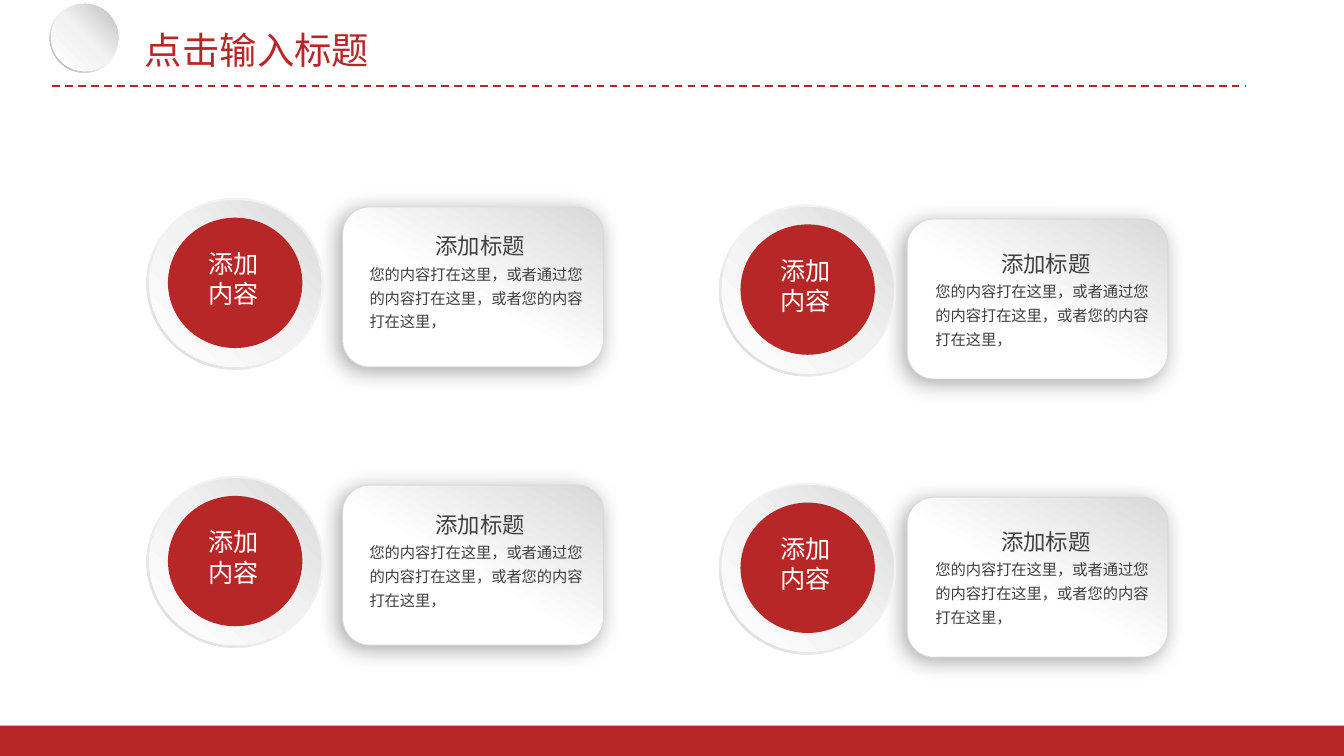
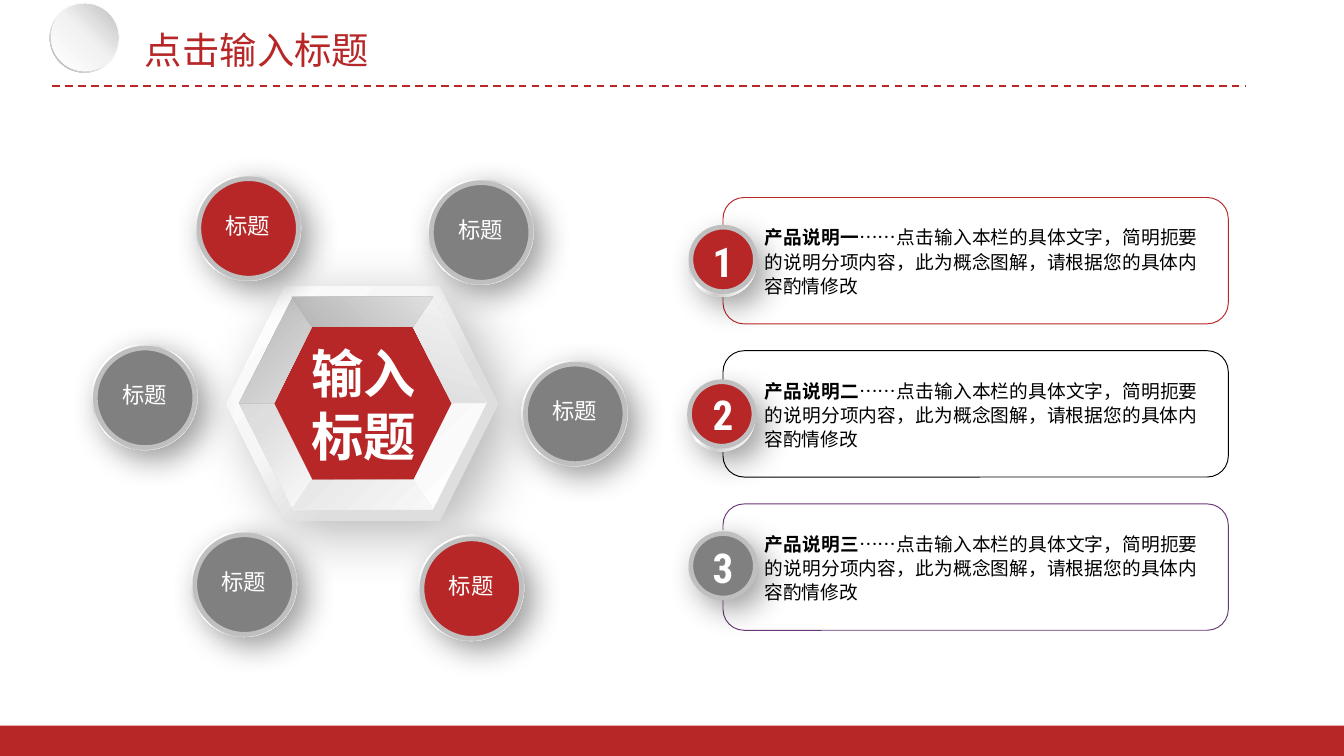
from lxml import etree
from pptx import Presentation, util as u
from pptx.dml.color import RGBColor
from pptx.enum import dml, shapes, text
from pptx.oxml import ns

RED = RGBColor(0xB7, 0x27, 0x27)
GREY = RGBColor(0x80, 0x80, 0x80)
DARK = RGBColor(0x40, 0x40, 0x40)
PURPLE = RGBColor(0x6A, 0x37, 0x79)
BLACK = RGBColor(0, 0, 0)
WHITE = RGBColor(0xFF, 0xFF, 0xFF)

CJK = "Noto Sans CJK SC"
ROBOTO = "Roboto Condensed"
KIND = shapes.MSO_SHAPE
CENTER, JUSTIFY = text.PP_ALIGN.CENTER, text.PP_ALIGN.JUSTIFY
MIDDLE = text.MSO_ANCHOR.MIDDLE
NO_INSET = (0, 0, 0, 0)

# Gradients: stops (percent, colour) and clockwise angle
TITLE_RIM = ([(0, "FFFFFF"), (55, "F2F2F2"), (100, "A6A6A6")], 135)
TITLE_DISC = ([(0, "FFFFFF"), (51, "F2F2F2"), (100, "BFBFBF")], 315)
BADGE_RIM = ([(0, "F2F2F2"), (55, "F2F2F2"), (100, "D9D9D9")], 135)
BADGE_DISC = ([(0, "FFFFFF"), (51, "F2F2F2"), (100, "D9D9D9")], 315)
CARD = ([(45, "FFFFFF"), (100, "D9D9D9")], 300)
CARD_EDGE = ([(0, "FFFFFF"), (50, "D9D9D9"), (100, "FFFFFF")], 45)
METAL = ([(16, "FFFFFF"), (33, "D9D9D9"), (49, "FFFFFF"), (69, "CCCCCC"), (91, "FFFFFF")], 45)
METAL_EDGE = ([(0, "FFFFFF"), (50, "BFBFBF"), (100, "FFFFFF")], 45)
HEX_BASE = ([(17, "DEDEDE"), (37, "E0E0E0"), (61, "F6F6F6"), (100, "FFFFFF")], 225)
HEX_RING = ([(0, "CBCBCB"), (32, "DEDEDE"), (57, "F5F5F5"), (100, "FFFFFF")], 45)
FACET_LIGHT = ([(0, "E6E6E6"), (100, "F7F7F7")], 45)
FACET_MID = ([(0, "DEDEDE"), (100, "F4F4F4")], 288)
FACET_DARK = ([(0, "B4B4B4"), (100, "DFDFDF")], 45)

# Shadows: colour, opacity percent, blur, distance, direction
CARD_SHADOW = ("000000", 34, 12, 3, 135)
BUTTON_SHADOW = ("000000", 40, 17, 7, 45)
HEX_SHADOW = ("696969", 47, 30, 10, 40)

TITLE = dict(size=u.Pt(20), name=ROBOTO, color=RED)
BADGE_TEXT = dict(size=u.Pt(13.5), name=CJK, color=WHITE)
CARD_HEAD = dict(size=u.Pt(12), name=CJK, color=DARK)
CARD_BODY = dict(size=u.Pt(8.2), name=CJK, color=DARK)
HEX_TEXT = dict(size=u.Pt(28), name=ROBOTO, color=WHITE, bold=True)
NUMBER = dict(size=u.Pt(22), name=ROBOTO, color=WHITE, bold=True)
BUTTON_TEXT = dict(size=u.Pt(12), name=ROBOTO, color=WHITE)
STEP = dict(size=u.Pt(10), name=ROBOTO, color=BLACK, bold=False)
STEP_HEAD = {**STEP, "bold": True}


def sub(parent, tag, **attrs):
    return etree.SubElement(parent, ns.qn(tag), {k: str(v) for k, v in attrs.items()})


def apply_gradient(fill, xml_parent, gradient):
    """Give a fill or line the listed stops and clockwise angle."""
    stops, angle = gradient
    fill.gradient()
    grad = xml_parent.find(ns.qn("a:gradFill"))
    for child in list(grad):
        grad.remove(child)
    gs_list = sub(grad, "a:gsLst")
    for pos, color in stops:
        sub(sub(gs_list, "a:gs", pos=pos * 1000), "a:srgbClr", val=color)
    sub(grad, "a:lin", ang=angle * 60000, scaled=0)


def paint(fill, xml_parent, value):
    """Apply None, a solid colour or a gradient."""
    if value is None:
        fill.background()
    elif isinstance(value, RGBColor):
        fill.solid()
        fill.fore_color.rgb = value
    else:
        apply_gradient(fill, xml_parent, value)


def add_shadow(sp, shadow):
    color, opacity, blur, dist, angle = shadow
    effects = sp._element.spPr.find(ns.qn("a:effectLst"))
    outer = sub(effects, "a:outerShdw", blurRad=u.Pt(blur), dist=u.Pt(dist),
                dir=angle * 60000, algn="ctr", rotWithShape=0)
    sub(sub(outer, "a:srgbClr", val=color), "a:alpha", val=opacity * 1000)


def style(sp, fill=None, line=None, width=0.5, shadow=None):
    sp.shadow.inherit = False
    paint(sp.fill, sp._element.spPr, fill)
    if line is None:
        sp.line.fill.background()
    else:
        sp.line.width = u.Pt(width)
        paint(sp.line.fill, sp.line._get_or_add_ln(), line)
    if shadow:
        add_shadow(sp, shadow)
    return sp


def shape(s, kind, x, y, w, h, adj=None, **look):
    sp = s.shapes.add_shape(kind, *map(u.Inches, (x, y, w, h)))
    if adj is not None:
        sp.adjustments[0] = adj
    return style(sp, **look)


def polygon(s, contours, fill):
    """Draw closed contours, given in inches, as one outline."""
    emu = [[(u.Inches(x), u.Inches(y)) for x, y in points] for points in contours]
    builder = s.shapes.build_freeform(*emu[0][0])
    for i, (start, *rest) in enumerate(emu):
        if i:
            builder.move_to(*start)
        builder.add_line_segments(rest, close=True)
    return style(builder.convert_to_shape(), fill)


def write(sp, paragraphs, inset=(0.1, 0.05, 0.1, 0.05), anchor=text.MSO_ANCHOR.TOP,
          align=None, spacing=None):
    """Fill a shape with paragraphs, each a list of (text, font) runs."""
    tf = sp.text_frame
    tf.word_wrap, tf.vertical_anchor = True, anchor
    for side, margin in zip(("left", "top", "right", "bottom"), inset):
        setattr(tf, f"margin_{side}", u.Inches(margin))
    for i, runs in enumerate(paragraphs):
        p = tf.add_paragraph() if i else tf.paragraphs[0]
        p.alignment, p.line_spacing = align, spacing
        for words, font in runs:
            r = p.add_run()
            r.text = words
            for attr, value in font.items():
                if attr == "color":
                    r.font.color.rgb = value
                else:
                    setattr(r.font, attr, value)
            sub(r.font._element, "a:ea", typeface=CJK)


def label(s, x, y, w, h, paragraphs, **layout):
    box = s.shapes.add_textbox(*map(u.Inches, (x, y, w, h)))
    write(box, paragraphs, **layout)
    return box


def disc(s, x, y, w, h, inset, rim, face):
    """A shaded disc with a thin rim around it."""
    shape(s, KIND.DONUT, x, y, w, h, 0.049, fill=rim)
    shape(s, KIND.OVAL, x + inset, y + inset, w - 2 * inset, h - 2 * inset, fill=face)


def new_slide(prs, title):
    s = prs.slides.add_slide(prs.slide_layouts[6])
    rule = s.shapes.add_connector(shapes.MSO_CONNECTOR.STRAIGHT,
                                  *map(u.Inches, (0.39, 0.64, 9.27, 0.64)))
    rule.line.color.rgb, rule.line.width = RED, u.Pt(1)
    rule.line.dash_style = dml.MSO_LINE.DASH
    sub(rule._element.spPr, "a:effectLst")
    disc(s, 0.37, 0.02, 0.52, 0.52, 0.01, TITLE_RIM, TITLE_DISC)
    shape(s, KIND.RECTANGLE, 0, 5.4, 10, 0.24, fill=RED)
    label(s, 0.98, 0.14, 2.75, 0.45, [[(title, TITLE)]], anchor=MIDDLE)
    return s


def card(s, x, y, text_x, text_y):
    shape(s, KIND.ROUNDED_RECTANGLE, x, y, 1.94, 1.19, fill=CARD, line=CARD_EDGE,
          shadow=CARD_SHADOW)
    body = "您的内容打在这里，或者通过您的内容打在这里，或者您的内容打在这里，"
    label(s, text_x, text_y, 1.83, 0.62, [[(body, CARD_BODY)]],
          inset=(0.07, 0.04, 0.07, 0.04), spacing=1.3)
    label(s, text_x + 0.49, text_y - 0.26, 1.1, 0.3, [[("添加标题", CARD_HEAD)]],
          inset=(0.07, 0, 0.07, 0), spacing=1.5)


def badge(s, x, y):
    disc(s, x, y, 1.32, 1.28, 0.02, BADGE_RIM, BADGE_DISC)
    shape(s, KIND.OVAL, x + 0.16, y + 0.15, 1, 0.97, fill=RED)
    label(s, x + 0.36, y + 0.33, 0.75, 0.56,
          [[(word, BADGE_TEXT)] for word in ("添加", "内容")])


def button(s, x, y, size, face, dx, dy, color):
    """A metal disc with a coloured face offset by dx, dy."""
    shape(s, KIND.OVAL, x, y, size, size, fill=METAL, shadow=BUTTON_SHADOW)
    shape(s, KIND.OVAL, x + dx, y + dy, face, face, fill=color, line=METAL_EDGE, width=2.5)


def orbit_button(s, x, y, color):
    button(s, x, y, 0.79, 0.74, 0.03, 0.03, color)
    sp = shape(s, KIND.OVAL, x + 0.02, y, 0.75, 0.75)
    write(sp, [[("标题", BUTTON_TEXT)]], inset=NO_INSET, anchor=MIDDLE, align=CENTER)


def hexagon_hub(s):
    inner = [(2.32, 2.43), (2.04, 3), (2.32, 3.57), (3.07, 3.57), (3.36, 3), (3.07, 2.43)]
    outer = [(2.18, 2.21), (3.22, 2.21), (3.62, 3), (3.22, 3.79), (2.18, 3.79), (1.78, 3)]
    shape(s, KIND.HEXAGON, 1.68, 2.13, 2.03, 1.75, fill=HEX_BASE, shadow=HEX_SHADOW)
    polygon(s, [inner, outer], HEX_RING)
    shape(s, KIND.HEXAGON, 2.04, 2.43, 1.32, 1.14, fill=RED)
    shape(s, KIND.TRAPEZOID, 2.17, 3.57, 1.05, 0.22, 0.663, fill=FACET_LIGHT)
    polygon(s, [[outer[1], inner[5], inner[4], outer[2]]], FACET_MID)
    polygon(s, [[outer[0], inner[0], inner[1], outer[5]]], FACET_DARK)
    top = shape(s, KIND.TRAPEZOID, 2.17, 2.21, 1.05, 0.22, 0.663, fill=FACET_DARK)
    top._element.spPr.xfrm.set("flipV", "1")
    label(s, 2.22, 2.54, 0.97, 0.94, [[("输入标题", HEX_TEXT)]], inset=NO_INSET, align=CENTER)


def step(s, i, name, edge, x, y, dy, color):
    """Panel i, with its numbered button at x, y."""
    top = 1.47 + 1.14 * i
    shape(s, KIND.ROUNDED_RECTANGLE, 5.38, top, 3.76, 0.94, line=edge)
    button(s, x, y, 0.51, 0.48, 0.02, dy, color)
    label(s, 5.3, top + 0.29, 0.16, 0.37, [[(str(i + 1), NUMBER)]],
          inset=NO_INSET, align=CENTER)
    body = "……点击输入本栏的具体文字，简明扼要的说明分项内容，此为概念图解，请根据您的具体内容酌情修改"
    label(s, 5.69, top + 0.2, 3.22, 0.55, [[(name, STEP_HEAD), (body, STEP)]],
          inset=NO_INSET, align=JUSTIFY, spacing=u.Pt(13))


def cards_slide(prs):
    s = new_slide(prs, "点击输入标题")
    columns = [((1.09, 1.47), (2.55, 1.54), (2.68, 1.89)),
               ((5.35, 1.52), (6.75, 1.63), (6.89, 2.02))]
    for drop in (0, 2.07):
        for (bx, by), (cx, cy), (tx, ty) in columns:
            card(s, cx, cy + drop, tx, ty + drop)
            badge(s, bx, by + drop)


def hub_slide(prs):
    s = new_slide(prs, "点击输入标题")
    steps = [("产品说明一", RED, 5.12, 1.7, -0.01, RED),
             ("产品说明二", BLACK, 5.11, 2.85, -0.01, RED),
             ("产品说明三", PURPLE, 5.12, 3.95, 0.02, GREY)]
    for i, values in enumerate(steps):
        step(s, i, *values)
    hexagon_hub(s)
    for x, y, color in [(1.42, 3.95, GREY), (3.11, 3.98, RED), (3.88, 2.68, GREY),
                        (3.18, 1.33, GREY), (1.45, 1.3, RED), (0.68, 2.56, GREY)]:
        orbit_button(s, x, y, color)


def main():
    prs = Presentation()
    prs.slide_width, prs.slide_height = u.Inches(10), u.Inches(10 * 9 / 16)
    cards_slide(prs)
    hub_slide(prs)
    prs.save("out.pptx")


if __name__ == "__main__":
    main()
